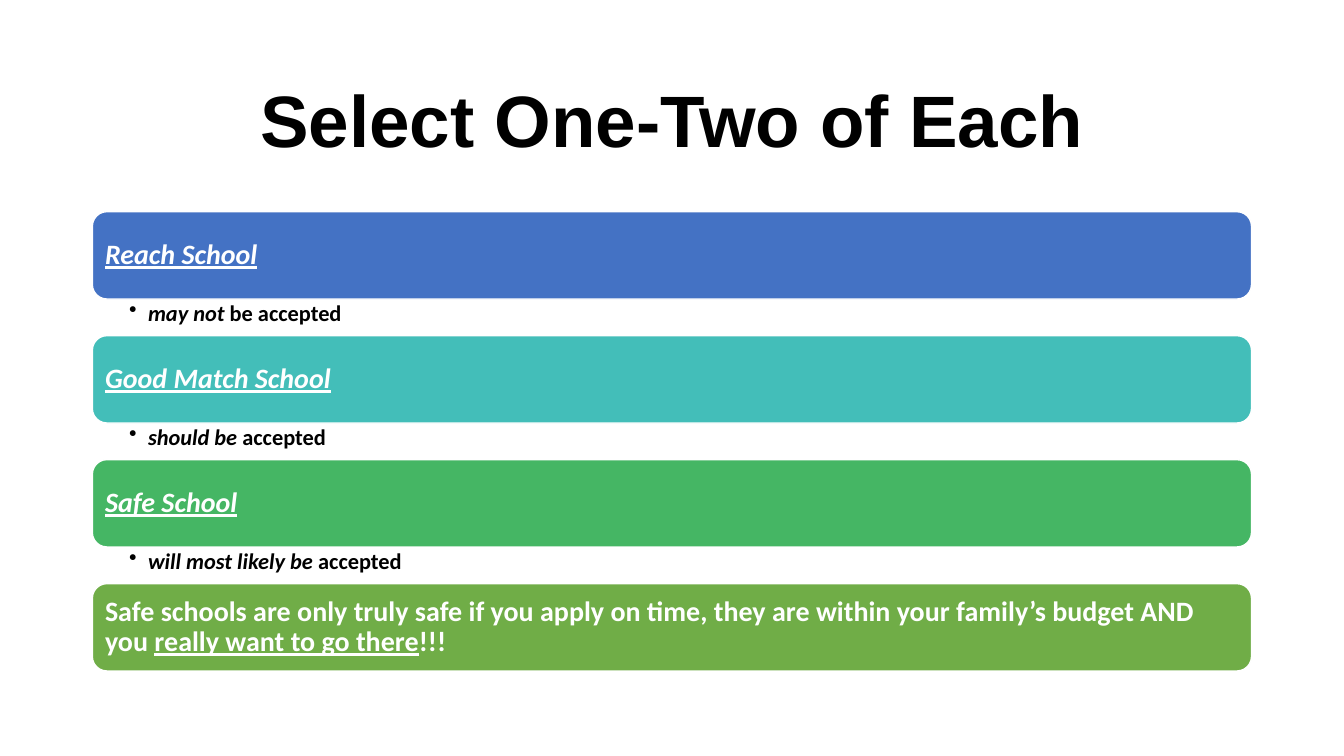
"""Build the slide about choosing reach, match and safe schools."""
import pptx
import pptx.dml.color
import pptx.enum.shapes
import pptx.enum.text
import pptx.oxml
import pptx.oxml.ns
import pptx.util

Pt = pptx.util.Pt
RGBColor = pptx.dml.color.RGBColor
ALIGN = pptx.enum.text.PP_ALIGN
ANCHOR = pptx.enum.text.MSO_ANCHOR

BLACK = RGBColor(0x00, 0x00, 0x00)
WHITE = RGBColor(0xFF, 0xFF, 0xFF)
BLUE = RGBColor(0x44, 0x72, 0xC4)
TEAL = RGBColor(0x43, 0xBE, 0xB9)
GREEN = RGBColor(0x45, 0xB6, 0x64)
OLIVE = RGBColor(0x70, 0xAD, 0x47)

LEFT, WIDTH = 66, 828
FIRST_TOP, PITCH, BAR_HEIGHT = 151.2, 88.56, 62.4


def add_run(paragraph, text, font="Calibri", size=20, color=WHITE, italic=False, underline=False):
    run = paragraph.add_run()
    run.text = text
    run.font.name = font
    run.font.size = Pt(size)
    run.font.color.rgb = color
    run.font.bold = True
    run.font.italic = italic
    run.font.underline = underline


class SchoolSlide:
    def __init__(self, deck):
        self.slide = deck.slides.add_slide(deck.slide_layouts[6])
        self.line_spacing = 0.9

    def prepare(self, shape, insets, anchor, align=ALIGN.LEFT):
        frame = shape.text_frame
        frame.word_wrap = True
        frame.vertical_anchor = anchor
        left, top, right, bottom = insets
        frame.margin_left, frame.margin_top = Pt(left), Pt(top)
        frame.margin_right, frame.margin_bottom = Pt(right), Pt(bottom)
        paragraph = frame.paragraphs[0]
        paragraph.alignment = align
        paragraph.line_spacing = self.line_spacing
        return paragraph

    def title(self, text):
        box = self.slide.shapes.add_textbox(Pt(LEFT), Pt(44), Pt(WIDTH), Pt(89.3))
        paragraph = self.prepare(box, (7.2, 3.6, 7.2, 3.6), ANCHOR.MIDDLE, ALIGN.CENTER)
        add_run(paragraph, text, font="Arial", size=52, color=BLACK)

    def bar(self, top, fill, runs):
        bar = self.slide.shapes.add_shape(
            pptx.enum.shapes.MSO_SHAPE.ROUNDED_RECTANGLE,
            Pt(LEFT), Pt(top), Pt(WIDTH), Pt(BAR_HEIGHT))
        bar.shadow.inherit = False
        bar.fill.solid()
        bar.fill.fore_color.rgb = fill
        bar.line.color.rgb = WHITE
        bar.line.width = Pt(1)
        paragraph = self.prepare(bar, (6, 6, 6, 6), ANCHOR.MIDDLE)
        for text, style in runs:
            add_run(paragraph, text, **style)

    def chance(self, top, stressed, rest):
        box = self.slide.shapes.add_textbox(
            Pt(LEFT), Pt(top), Pt(WIDTH), Pt(PITCH - BAR_HEIGHT))
        paragraph = self.prepare(box, (26.3, 2, 11.5, 2), ANCHOR.TOP)
        paragraph.level = 1
        properties = paragraph._p.get_or_add_pPr()
        properties.set("marL", str(Pt(13.5)))
        properties.set("indent", str(-Pt(13.5)))
        bullet = pptx.oxml.parse_xml(
            f'<a:buChar {pptx.oxml.ns.nsdecls("a")} char="•"/>')
        properties.append(bullet)
        add_run(paragraph, stressed, size=16, color=BLACK, italic=True)
        add_run(paragraph, rest, size=16, color=BLACK)


def main():
    deck = pptx.Presentation()
    deck.slide_width, deck.slide_height = Pt(960), Pt(540)
    page = SchoolSlide(deck)
    page.title("Select One-Two of Each")

    schools = [
        ("Reach School", BLUE, "may not", " be accepted"),
        ("Good Match School", TEAL, "should be", " accepted"),
        ("Safe School", GREEN, "will most likely be", " accepted"),
    ]
    heading = {"italic": True, "underline": True}
    for index, (school, fill, stressed, rest) in enumerate(schools):
        top = FIRST_TOP + index * PITCH
        page.bar(top, fill, [(school, heading)])
        page.chance(top + BAR_HEIGHT, stressed, rest)

    page.bar(FIRST_TOP + len(schools) * PITCH, OLIVE, [
        ("Safe schools are only truly safe if you apply on time, "
         "they are within your family’s budget AND you ", {}),
        ("really want to go there", {"underline": True}),
        ("!!!", {}),
    ])
    deck.save("out.pptx")


if __name__ == "__main__":
    main()
